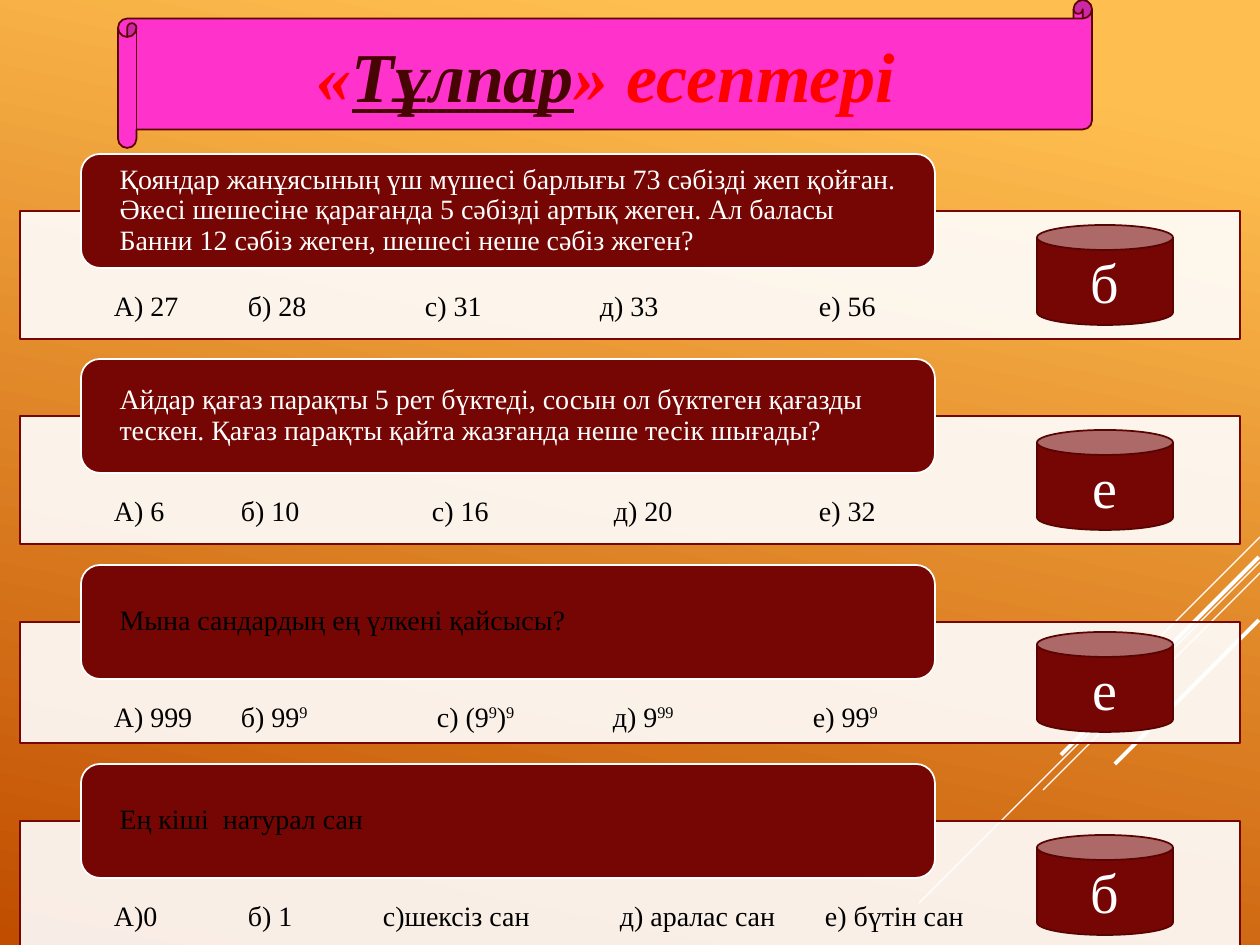
from pptx import Presentation
from pptx import util as u
from pptx.dml.color import RGBColor
from pptx.enum import shapes, text
from pptx.oxml.ns import qn
from lxml import etree

EMU_PER_PX = 914400 / 126
FONT = "Times New Roman"
MAROON, EDGE, WHITE, BLACK = "760603", "570402", "FFFFFF", "000000"


def px(n):
    return u.Emu(round(n * EMU_PER_PX))


def color(value):
    return RGBColor.from_string(value)


def add_run(paragraph, words, size, ink):
    run = paragraph.add_run()
    run.text = words
    run.font.name = FONT
    run.font.size = u.Pt(size)
    run.font.color.rgb = color(ink)
    return run


def add_block(slide, kind, box, fill, line):
    block = slide.shapes.add_shape(kind, *map(px, box))
    block.shadow.inherit = False
    block.fill.solid()
    block.fill.fore_color.rgb = color(fill)
    block.line.color.rgb = color(line)
    block.line.width = u.Pt(1)
    return block


def start_text(block, margins, anchor, align):
    frame = block.text_frame
    frame.word_wrap = True
    frame.margin_left, frame.margin_top, frame.margin_right, frame.margin_bottom = map(px, margins)
    frame.vertical_anchor = anchor
    paragraph = frame.paragraphs[0]
    paragraph.alignment = align
    return paragraph


def paint_background(slide):
    fill = slide.background.fill
    fill.gradient()
    fill.gradient_angle = 258
    for stop, (position, value) in zip(fill.gradient_stops, [(0.1, "FFBF50"), (1, "C04D00")]):
        stop.position = position
        stop.color.rgb = color(value)


def add_corner_rays(slide, right):
    rays = [(0, 537, 104, 0.75), (0, 562, 341, 0.75), (0, 573, 217, 0.75),
            (1, 557, 198, 2.25), (1, 620, 144, 2.25)]
    for inset, top, reach, weight in rays:
        start = right - inset
        ray = slide.shapes.add_connector(
            shapes.MSO_CONNECTOR.STRAIGHT,
            px(start), px(top), px(start - reach), px(top + reach))
        ray.line.color.rgb = color(WHITE)
        ray.line.width = u.Pt(weight)
        etree.SubElement(ray._element.spPr, qn("a:effectLst"))


def add_heading(slide, box):
    left, top, width, height = box
    add_block(slide, shapes.MSO_SHAPE.HORIZONTAL_SCROLL, box, "FF33CC", EDGE)
    title = slide.shapes.title
    title.left, title.top = px(left + 109), px(top + 26)
    title.width, title.height = px(width - 216), px(98)
    paragraph = start_text(title, (13, 6, 13, 6), text.MSO_ANCHOR.MIDDLE, text.PP_ALIGN.CENTER)
    for words, ink, underlined in [("«", "FF0000", False), ("Тұлпар", "460402", True),
                                   ("» есептері", "FF0000", False)]:
        font = add_run(paragraph, words, 40, ink).font
        font.bold = font.italic = True
        font.underline = underlined
    slide.shapes._spTree.append(title._element)


def add_tabs(paragraph, stops):
    tabs = etree.SubElement(paragraph._p.get_or_add_pPr(), qn("a:tabLst"))
    for stop in stops:
        etree.SubElement(tabs, qn("a:tab"), pos=str(px(stop)), algn="l")


def add_choices(slide, box, choices, stops):
    panel = add_block(slide, shapes.MSO_SHAPE.RECTANGLE, box, WHITE, MAROON)
    tint = panel._element.spPr.find(qn("a:solidFill"))[0]
    etree.SubElement(tint, qn("a:alpha"), val="90000")
    paragraph = start_text(panel, (94, 81, 94, 11), text.MSO_ANCHOR.TOP, text.PP_ALIGN.LEFT)
    add_tabs(paragraph, stops)
    paragraph.line_spacing = 0.9
    for i, part in enumerate("\t".join(choices).split("^")):
        if part:
            run = add_run(paragraph, part, 16, BLACK)
            if i % 2:
                run._r.get_or_add_rPr().set("baseline", "30000")


def add_question(slide, box, question, ink):
    card = add_block(slide, shapes.MSO_SHAPE.ROUNDED_RECTANGLE, box, MAROON, WHITE)
    paragraph = start_text(card, (33, 0, 30, 0), text.MSO_ANCHOR.MIDDLE, text.PP_ALIGN.LEFT)
    paragraph.line_spacing = 0.9
    add_run(paragraph, question, 16, ink)


def add_answer(slide, box, letter):
    can = add_block(slide, shapes.MSO_SHAPE.CAN, box, MAROON, EDGE)
    paragraph = start_text(can, (13, 6, 13, 6), text.MSO_ANCHOR.MIDDLE, text.PP_ALIGN.CENTER)
    add_run(paragraph, letter, 32, WHITE)


def add_problem(slide, box, question, ink, choices, stops, letter):
    left, top, width, height = box
    panel_top, panel_height = top + 57, height - 57
    add_choices(slide, (left, panel_top, width, panel_height), choices, stops)
    add_question(slide, (left + 61, top, 854, 114), question, ink)
    add_answer(slide, (left + 1017, panel_top + (panel_height - 100) // 2, 136, 100), letter)


PROBLEMS = [
    (154, 185, "Қояндар жанұясының үш мүшесі барлығы 73 сәбізді жеп қойған. "
     "Әкесі шешесіне қарағанда 5 сәбізді артық жеген. Ал баласы Банни 12 сәбіз жеген, "
     "шешесі неше сәбіз жеген?", WHITE,
     ["А) 27", "б) 28", "с) 31", "д) 33", "е) 56"], (134, 311, 486, 705), "б"),
    (359, 185, "Айдар қағаз парақты 5 рет бүктеді, сосын ол бүктеген қағазды тескен. "
     "Қағаз парақты қайта жазғанда неше тесік шығады?", WHITE,
     ["А) 6", "б) 10", "с) 16", "д) 20", "е) 32"], (127, 318, 500, 705), "е"),
    (565, 178, "Мына сандардың ең үлкені қайсысы?", BLACK,
     ["А) 999", "б) 99^9^", "с) (9^9^)^9^", "д) 9^99^", "е) 99^9^"], (127, 323, 499, 699), "е"),
    (764, 185, "Ең кіші  натурал сан", BLACK,
     ["А)0", "б) 1", "с)шексіз сан", "д) аралас сан", "е) бүтін сан"], (134, 269, 506, 711), "б"),
]


def main():
    deck = Presentation()
    deck.slide_width, deck.slide_height = px(1260), px(945)
    slide = deck.slides.add_slide(deck.slide_layouts[5])
    paint_background(slide)
    add_corner_rays(slide, 1260)
    add_heading(slide, (118, 0, 974, 148))
    for top, height, *content in PROBLEMS:
        add_problem(slide, (20, top, 1220, height), *content)
    deck.save("out.pptx")


if __name__ == "__main__":
    main()
